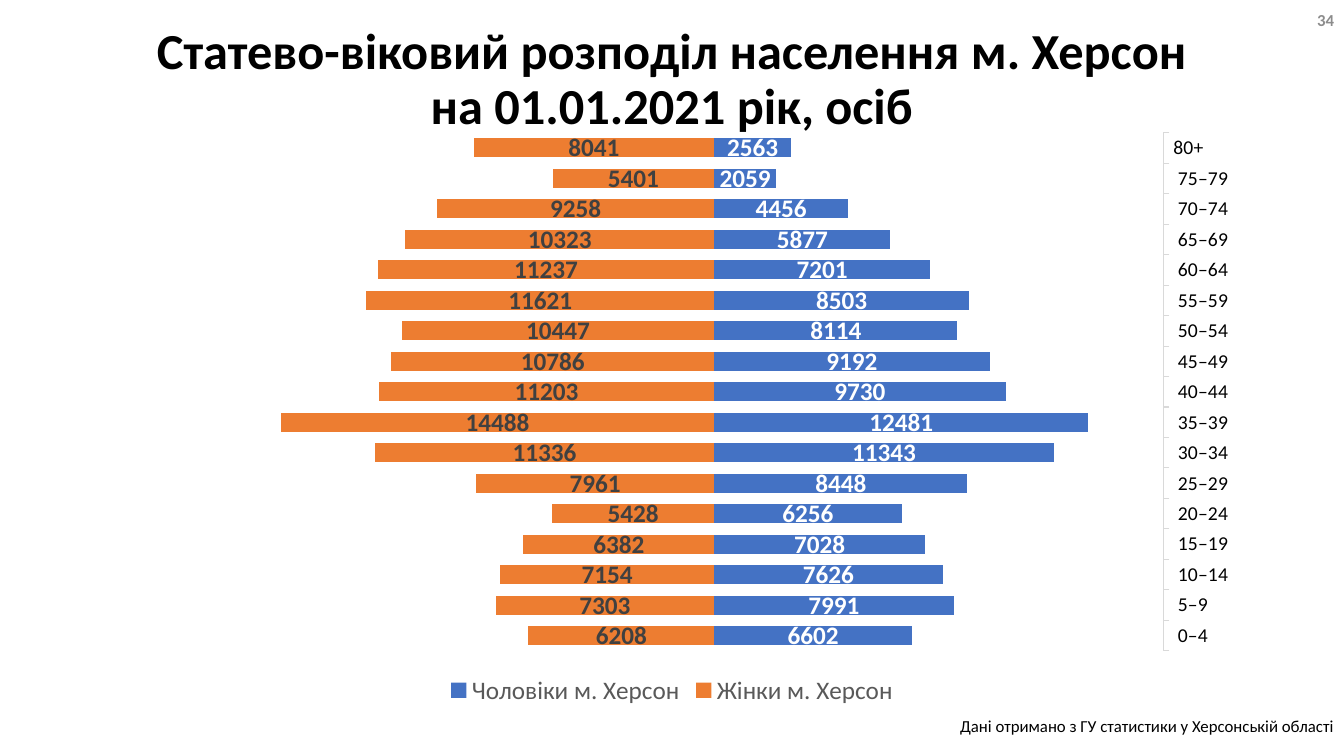
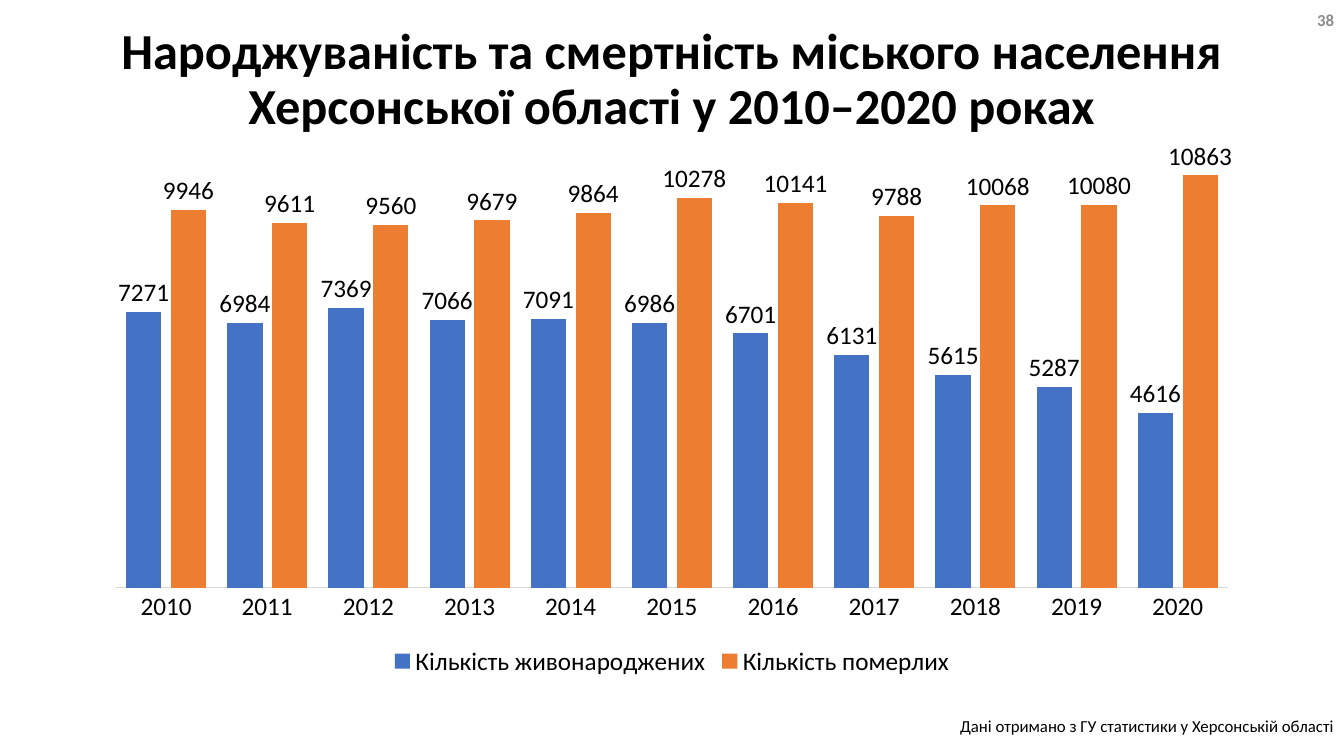
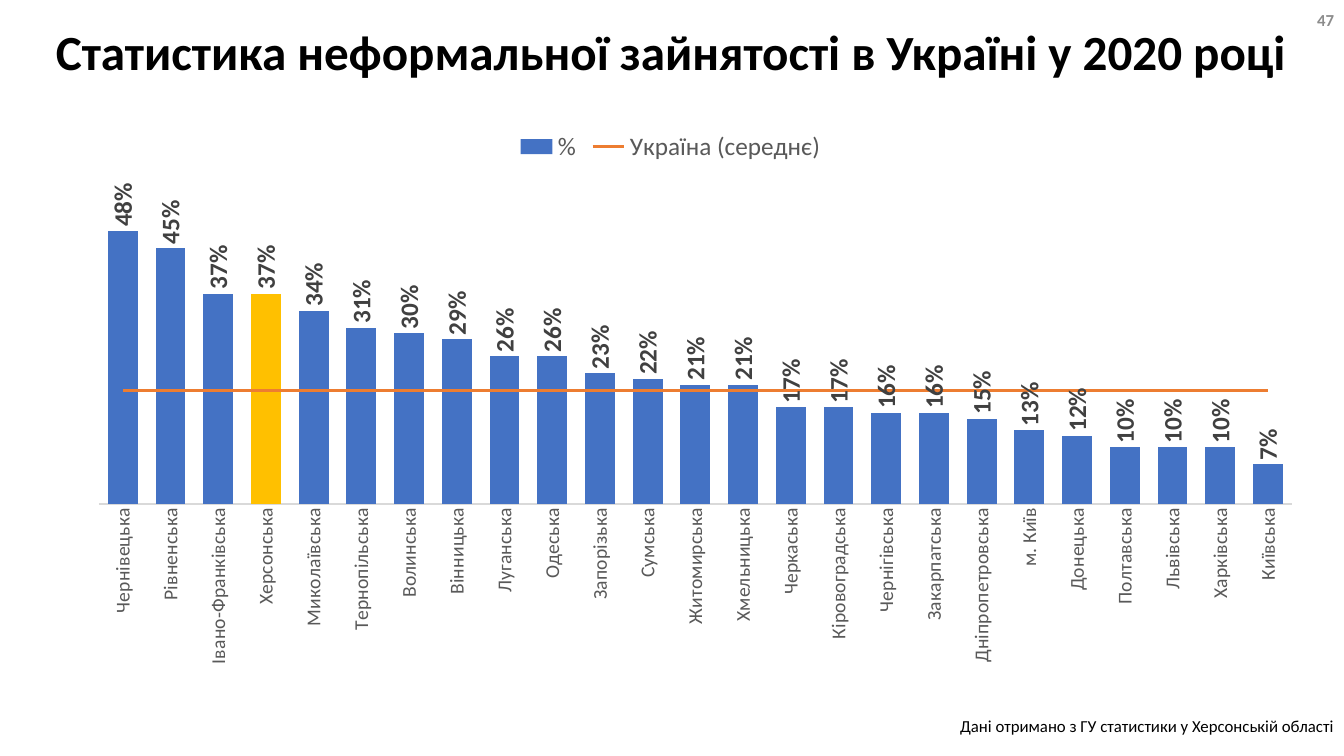
from collections import namedtuple

from lxml.etree import SubElement
from pptx import Presentation
from pptx.chart.data import CategoryChartData
from pptx.dml.color import RGBColor
from pptx.enum.chart import (XL_AXIS_CROSSES, XL_CHART_TYPE, XL_LABEL_POSITION,
                             XL_LEGEND_POSITION, XL_TICK_LABEL_POSITION, XL_TICK_MARK)
from pptx.enum.text import MSO_ANCHOR, PP_ALIGN
from pptx.oxml.ns import qn
from pptx.util import Pt

Box = namedtuple("Box", "left top width height")

COLORS = {
    "text": "000000",
    "number": "8C8C8C",
    "label": "404040",
    "muted": "595959",
    "axis": "D9D9D9",
    "white": "FFFFFF",
    "blue": "4472C4",
    "orange": "ED7D31",
    "highlight": "FFC000",
}
FONT = "Calibri"
SOURCE = "Дані отримано з ГУ статистики у Херсонській області"
PAGE = Box(0, 0, 960, 540)
NUMBER_BOX = Box(744, 0, 216, 28.8)
SOURCE_BOX = Box(0, 507.6, 960, 21.6)

AGES = [f" {start}–{start + 4}" for start in range(0, 80, 5)] + ["80+"]
MEN = [6602, 7991, 7626, 7028, 6256, 8448, 11343, 12481, 9730,
       9192, 8114, 8503, 7201, 5877, 4456, 2059, 2563]
WOMEN = [6208, 7303, 7154, 6382, 5428, 7961, 11336, 14488, 11203,
         10786, 10447, 11621, 11237, 10323, 9258, 5401, 8041]

YEARS = [str(year) for year in range(2010, 2021)]
BIRTHS = [7271, 6984, 7369, 7066, 7091, 6986, 6701, 6131, 5615, 5287, 4616]
DEATHS = [9946, 9611, 9560, 9679, 9864, 10278, 10141, 9788, 10068, 10080, 10863]

REGION_SHARES = {
    "Чернівецька": 0.48, "Рівненська": 0.45, "Івано-Франківська": 0.37,
    "Херсонська": 0.37, "Миколаївська": 0.34, "Тернопільська": 0.31,
    "Волинська": 0.3, "Вінницька": 0.29, "Луганська": 0.26, "Одеська": 0.26,
    "Запорізька": 0.23, "Сумська": 0.22, "Житомирська": 0.21,
    "Хмельницька": 0.21, "Черкаська": 0.17, "Кіровоградська": 0.17,
    "Чернігівська": 0.16, "Закарпатська": 0.16, "Дніпропетровська": 0.15,
    "м. Київ": 0.13, "Донецька": 0.12, "Полтавська": 0.1, "Львівська": 0.1,
    "Харківська": 0.1, "Київська": 0.07,
}
UKRAINE_AVERAGE = 0.2


def rgb(name):
    """Return the named colour."""
    return RGBColor.from_string(COLORS[name])


def style_font(font, size, color, bold=False):
    """Set the shared typeface with a size, colour and weight."""
    font.name = FONT
    font.size = Pt(size)
    font.bold = bold
    font.color.rgb = rgb(color)


def add_text(page, box, text, size, color="text", bold=False,
             align=PP_ALIGN.RIGHT, anchor=MSO_ANCHOR.MIDDLE, spacing=1.0):
    """Place one paragraph of text in a box."""
    frame = page.shapes.add_textbox(*map(Pt, box)).text_frame
    frame.word_wrap = True
    frame.vertical_anchor = anchor
    para = frame.paragraphs[0]
    para.text = text
    para.alignment = align
    para.line_spacing = spacing
    style_font(para.font, size, color, bold)


def add_page(deck, title, title_box, number, title_size=36):
    """Add a slide with its title, number and source line."""
    page = deck.slides.add_slide(deck.slide_layouts[6])
    add_text(page, title_box, title, title_size, bold=True,
             align=PP_ALIGN.CENTER, spacing=0.9)
    add_text(page, NUMBER_BOX, str(number), 12, "number", bold=True)
    add_text(page, SOURCE_BOX, SOURCE, 12, anchor=MSO_ANCHOR.TOP)
    return page


def add_bar_chart(page, box, kind, categories, series, limits, overlap,
                  axis_size, axis_color="text", legend_color="muted",
                  legend_position=XL_LEGEND_POSITION.BOTTOM, number_format="General"):
    """Place a two-colour bar chart with a hidden value axis."""
    data = CategoryChartData(number_format=number_format)
    data.categories = categories
    for name, values in series.items():
        data.add_series(name, values)
    chart = page.shapes.add_chart(kind, *map(Pt, box), data).chart
    chart.has_title = False
    style_font(chart.font, 18, "text")

    chart.has_legend = True
    chart.legend.position = legend_position
    chart.legend.include_in_layout = False
    style_font(chart.legend.font, 18, legend_color)

    values_axis = chart.value_axis
    values_axis.minimum_scale, values_axis.maximum_scale = limits
    values_axis.has_major_gridlines = False
    values_axis.visible = False

    axis = chart.category_axis
    axis.major_tick_mark = XL_TICK_MARK.NONE
    axis.format.line.color.rgb = rgb("axis")
    axis.format.line.width = Pt(0.75)
    style_font(axis.tick_labels.font, axis_size, axis_color)

    plot = chart.plots[0]
    plot.gap_width = 60
    plot.overlap = overlap
    plot.vary_by_categories = False
    for bars, color in zip(plot.series, ("blue", "orange")):
        bars.invert_if_negative = False
        bars.format.fill.solid()
        bars.format.fill.fore_color.rgb = rgb(color)
    return chart


def label_bars(bars, color, bold=False, position=None, number_format="0"):
    """Show the value of every bar in a series."""
    labels = bars.data_labels
    labels.show_value = True
    labels.number_format = number_format
    labels.number_format_is_linked = False
    style_font(labels.font, 18, color, bold)
    if position is not None:
        labels.position = position
    return labels


def turn_upright(element):
    """Turn the text of a chart part to read upwards."""
    for body in element.iter(qn("a:bodyPr")):
        body.set("rot", "-5400000")
        body.set("vert", "horz")


def set_plot_area(chart, **fractions):
    """Fix the inner plot area as fractions of the chart."""
    area = chart.plots[0]._element.getparent()
    for old in area.findall(qn("c:layout")):
        area.remove(old)
    layout = SubElement(area, qn("c:layout"))
    area.insert(0, layout)
    manual = SubElement(layout, qn("c:manualLayout"))
    settings = {"layoutTarget": "inner", "xMode": "edge", "yMode": "edge", **fractions}
    for tag, value in settings.items():
        SubElement(manual, qn(f"c:{tag}")).set("val", str(value))


def draw_as_line(chart, series, color):
    """Move a bar series to a line plot on the same axes."""
    series.format.fill.background()
    series.format.line.color.rgb = rgb(color)
    series.format.line.width = Pt(2.25)
    bar_plot = chart.plots[0]._element
    item = series._element
    item.remove(item.find(qn("c:invertIfNegative")))
    shape = item.find(qn("c:spPr"))
    shape.remove(shape.find(qn("a:noFill")))
    marker = SubElement(item, qn("c:marker"))
    SubElement(marker, qn("c:symbol")).set("val", "none")
    shape.addnext(marker)
    SubElement(item, qn("c:smooth")).set("val", "0")

    line_plot = SubElement(bar_plot.getparent(), qn("c:lineChart"))
    bar_plot.addnext(line_plot)
    SubElement(line_plot, qn("c:grouping")).set("val", "standard")
    SubElement(line_plot, qn("c:varyColors")).set("val", "0")
    line_plot.append(item)
    SubElement(line_plot, qn("c:marker")).set("val", "1")
    for axis in bar_plot.findall(qn("c:axId")):
        SubElement(line_plot, qn("c:axId")).set("val", axis.get("val"))


def add_population_page(deck):
    """Build the age and sex pyramid."""
    page = add_page(deck, "Статево-віковий розподіл населення м. Херсон\vна 01.01.2021 рік, осіб",
                    Box(0, 28.8, PAGE.width, 57.6), 34)
    series = {"Чоловіки м. Херсон": MEN,
              "Жінки м. Херсон": [-count for count in WOMEN]}
    chart = add_bar_chart(page, Box(66, 86.4, 828, 421.2), XL_CHART_TYPE.BAR_STACKED,
                          AGES, series, (-20000, 15000), 100, 14)
    chart.value_axis.crosses = XL_AXIS_CROSSES.MAXIMUM
    chart.category_axis.major_tick_mark = XL_TICK_MARK.OUTSIDE
    chart.category_axis.tick_label_position = XL_TICK_LABEL_POSITION.HIGH
    men, women = chart.plots[0].series
    label_bars(men, "white", bold=True)
    label_bars(women, "label", bold=True, number_format="#;#;0")


def add_births_page(deck):
    """Build the yearly comparison of births and deaths."""
    page = add_page(deck, "Народжуваність та смертність міського населення "
                    "Херсонської області у 2010–2020 роках",
                    Box(66, 28.8, 828, 57.6), 38)
    series = {"Кількість живонароджених": BIRTHS, "Кількість померлих": DEATHS}
    chart = add_bar_chart(page, Box(66, 86.4, 828, 400.4), XL_CHART_TYPE.COLUMN_CLUSTERED,
                          YEARS, series, (0, 12000), -27, 18, legend_color="text")
    for bars in chart.plots[0].series:
        label_bars(bars, "text", position=XL_LABEL_POSITION.OUTSIDE_END)


def add_employment_page(deck):
    """Build the regional ranking with the national average line."""
    page = add_page(deck, "Статистика неформальної зайнятості в Україні у 2020 році",
                    Box(-0.7, 10.8, PAGE.width, 56.2), 47, title_size=35.1)
    regions = list(REGION_SHARES)
    series = {"%": REGION_SHARES.values(),
              "Україна (середнє)": [UKRAINE_AVERAGE] * len(regions)}
    chart = add_bar_chart(page, Box(20.2, 85, 917.3, 401), XL_CHART_TYPE.COLUMN_CLUSTERED,
                          regions, series, (0, 0.6), -27, 14, axis_color="muted",
                          legend_position=XL_LEGEND_POSITION.TOP, number_format="0%")
    shares, average = chart.plots[0].series
    kherson = shares.points[regions.index("Херсонська")].format.fill
    kherson.solid()
    kherson.fore_color.rgb = rgb("highlight")
    labels = label_bars(shares, "label", bold=True, number_format="0%",
                        position=XL_LABEL_POSITION.OUTSIDE_END)
    turn_upright(labels._element)
    turn_upright(chart.category_axis._element)
    set_plot_area(chart, x=0.055, y=0.078, w=0.929, h=0.608)
    draw_as_line(chart, average, "orange")


def main():
    """Build and save the deck."""
    deck = Presentation()
    deck.slide_width, deck.slide_height = Pt(PAGE.width), Pt(PAGE.height)
    add_population_page(deck)
    add_births_page(deck)
    add_employment_page(deck)
    deck.save("out.pptx")


if __name__ == "__main__":
    main()
